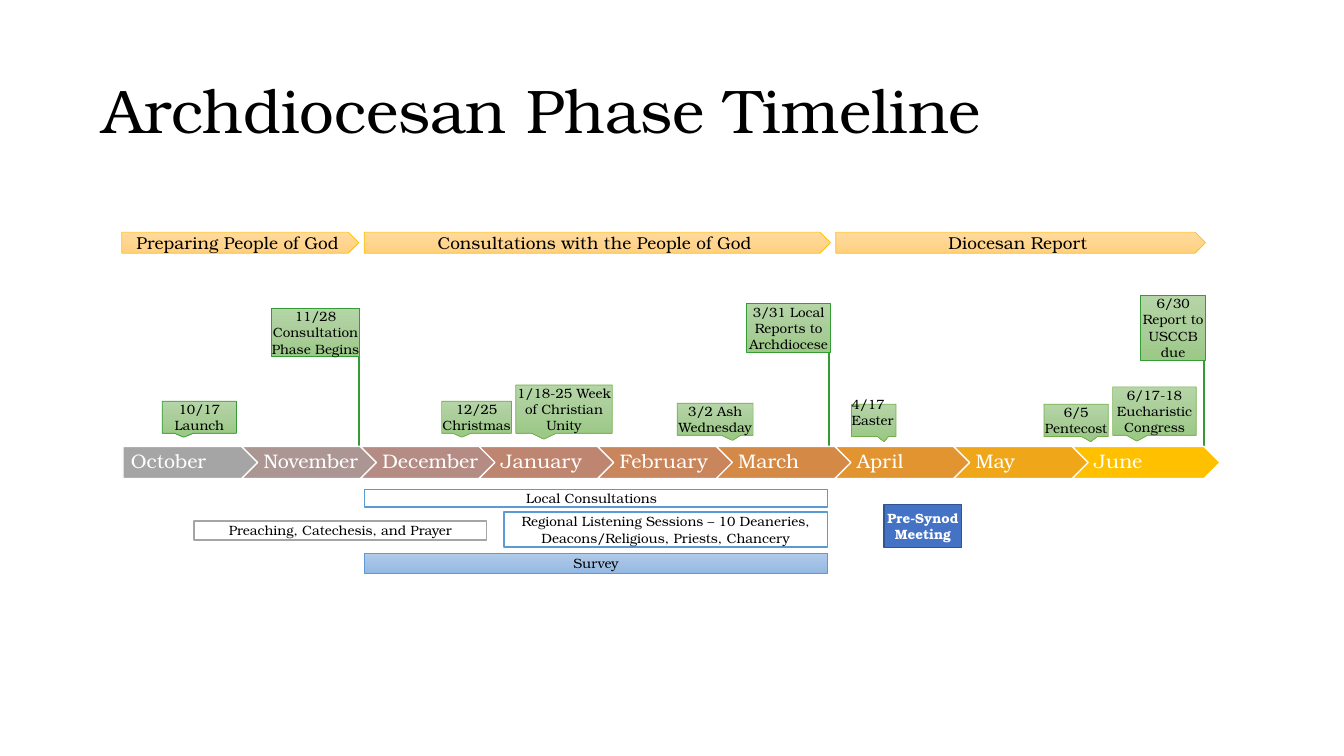
"""Build the Archdiocesan Phase Timeline slide."""
from copy import deepcopy

from lxml.etree import SubElement
from pptx import Presentation
from pptx.dml.color import RGBColor
from pptx.enum.shapes import MSO_CONNECTOR, MSO_SHAPE as Preset
from pptx.enum.text import MSO_ANCHOR as Anchor, PP_ALIGN as Align
from pptx.oxml.ns import qn
from pptx.util import Cm, Pt

FONT = "TeX Gyre Bonum"
BLACK, WHITE, BLUE = "000000", "FFFFFF", "5B9BD5"
GREEN, LIGHT_GREEN = "349C34", "70AD47"
GREEN_SHADES = ("B5D5A7", "AACE9A", "9CC987")
GOLD_SHADES = ("FFDB9E", "FFD590", "FFD07C")
BLUE_SHADES = ("B1CBE9", "A3C1E5", "93B9E4")


def rgb(value):
    return RGBColor.from_string(value)


def add_box(preset, place, text, shades, edge, edge_width=0.5, size=9.6, color=BLACK):
    shape = slide.shapes.add_shape(preset, *map(Cm, place))
    shape.shadow.inherit = False
    if len(shades) == 1:
        shape.fill.solid()
        shape.fill.fore_color.rgb = rgb(shades[0])
    else:
        shape.fill.gradient()
        shape.fill.gradient_angle = 270
        stop_list = shape.element.spPr.find(qn("a:gradFill")).find(qn("a:gsLst"))
        stop_list.insert(1, deepcopy(stop_list[0]))
        for stop, shade, position in zip(shape.fill.gradient_stops, shades, (0, 0.5, 1)):
            stop.color.rgb = rgb(shade)
            stop.position = position
    shape.line.color.rgb = rgb(edge)
    shape.line.width = Pt(edge_width)
    frame = shape.text_frame
    frame.word_wrap = True
    frame.vertical_anchor = Anchor.MIDDLE
    frame.margin_left = frame.margin_right = frame.margin_top = frame.margin_bottom = 0
    frame.text = text
    for paragraph in frame.paragraphs:
        paragraph.alignment = Align.CENTER
        paragraph.font.name = FONT
        paragraph.font.size = Pt(size)
        paragraph.font.color.rgb = rgb(color)
    return shape


presentation = Presentation()
presentation.slide_width, presentation.slide_height = Cm(33.87), Cm(19.05)
slide = presentation.slides.add_slide(presentation.slide_layouts[5])

title = slide.shapes.title
title.left, title.top, title.width, title.height = map(Cm, (2.33, 1.01, 29.21, 3.68))
title.text_frame.text = "Archdiocesan Phase Timeline"
title.text_frame.vertical_anchor = Anchor.MIDDLE
paragraph = title.text_frame.paragraphs[0]
paragraph.alignment = Align.LEFT
paragraph.line_spacing = 0.9
paragraph.font.name = FONT
paragraph.font.size = Pt(44)
paragraph.font.color.rgb = rgb(BLACK)

for x in (9.04, 20.9, 30.35):
    milestone = slide.shapes.add_connector(
        MSO_CONNECTOR.STRAIGHT, Cm(x), Cm(11.3), Cm(x), Cm(8.26))
    milestone.line.color.rgb = rgb(GREEN)
    milestone.line.width = Pt(1.5)
    SubElement(milestone.element.spPr, qn("a:effectLst"))

months = [
    ("October", "A5A5A5"), ("November", "AC9694"), ("December", "B48C83"),
    ("January", "BE8670"), ("February", "C9855C"), ("March", "D48947"),
    ("April", "E19430"), ("May", "F0A619"), ("June", "FFC000"),
]
for index, (month, shade) in enumerate(months):
    preset = Preset.CHEVRON if index else Preset.PENTAGON
    shape = add_box(preset, (3.1 + 2.99 * index, 11.25, 3.73, 0.81), month,
                    [shade], WHITE, 1, 14, WHITE)
    shape.text_frame.margin_left = Cm(0.15 if index else 0.2)
    shape.text_frame.paragraphs[0].alignment = Align.LEFT
    shape.text_frame.paragraphs[0].line_spacing = 0.9

for left, width, phase in [
    (3.07, 5.97, "Preparing People of God"),
    (9.18, 11.75, "Consultations with the People of God"),
    (21.06, 9.32, "Diocesan Report"),
]:
    add_box(Preset.PENTAGON, (left, 5.85, width, 0.53), phase, GOLD_SHADES, "FFC000", size=12.3)

for place, text in [
    ((6.83, 7.77, 2.24, 1.22), "11/28 Consultation Phase Begins"),
    ((28.75, 7.44, 1.63, 1.63), "6/30 Report to USCCB due"),
    ((18.82, 7.65, 2.11, 1.22), "3/31 Local Reports to Archdiocese"),
]:
    add_box(Preset.RECTANGLE, place, text, GREEN_SHADES, GREEN)

left_tail, right_tail = (-0.21, 0.62), (0.23, 0.66)
callouts = {}
for place, text, edge, tail in [
    ((4.09, 10.11, 1.87, 0.81), "10/17 Launch", GREEN, left_tail),
    ((13, 9.7, 2.43, 1.22), "1/18-25 Week of Christian Unity", LIGHT_GREEN, left_tail),
    ((11.13, 10.11, 1.76, 0.81), "12/25 Christmas", LIGHT_GREEN, left_tail),
    ((21.46, 10.19, 1.12, 0.81), "4/17\nEaster", LIGHT_GREEN, right_tail),
    ((28.04, 9.75, 2.11, 1.22), "6/17-18 Eucharistic Congress", LIGHT_GREEN, left_tail),
    ((17.07, 10.16, 1.91, 0.81), "3/2 Ash Wednesday", LIGHT_GREEN, right_tail),
    ((26.31, 10.19, 1.62, 0.81), "6/5\nPentecost", LIGHT_GREEN, right_tail),
]:
    callout = add_box(Preset.RECTANGULAR_CALLOUT, place, text, GREEN_SHADES, edge)
    callout.adjustments[0], callout.adjustments[1] = tail
    callouts[text] = callout
easter = callouts["4/17\nEaster"].text_frame
easter.margin_bottom = Cm(0.4)
for paragraph in easter.paragraphs:
    paragraph.alignment = Align.LEFT

for place, text, shades, edge, edge_width in [
    ((4.89, 13.13, 7.37, 0.48), "Preaching, Catechesis, and Prayer", [WHITE], "A5A5A5", 1),
    ((12.7, 12.9, 8.15, 0.89),
     "Regional Listening Sessions – 10 Deaneries, Deacons/Religious, Priests, Chancery",
     [WHITE], BLUE, 1),
    ((9.19, 13.94, 11.66, 0.52), "Survey", BLUE_SHADES, BLUE, 0.5),
]:
    add_box(Preset.RECTANGLE, place, text, shades, edge, edge_width)

local = add_box(Preset.RECTANGLE, (9.19, 12.34, 11.66, 0.44), "Local Consultations",
                [WHITE], BLUE, 1)
local.text_frame.margin_right = Cm(0.23)

meeting = add_box(Preset.RECTANGLE, (22.28, 12.72, 1.96, 1.08), "Pre-Synod Meeting",
                  ["4472C4"], "325491", 1, color=WHITE)
meeting.text_frame.paragraphs[0].font.bold = True

presentation.save("out.pptx")
